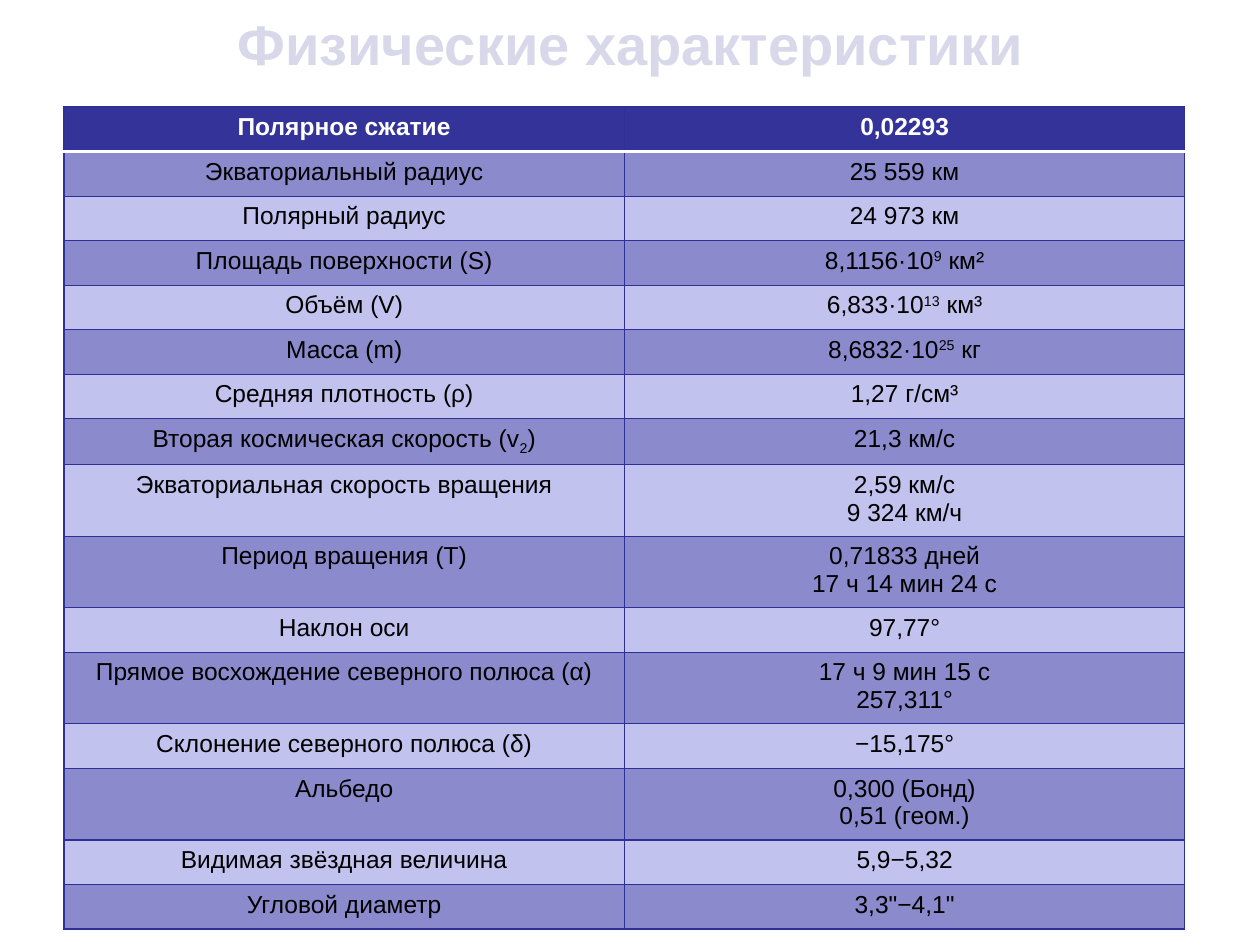
from lxml import etree
from pptx import Presentation
from pptx import util as u
from pptx.dml.color import RGBColor
from pptx.enum import text
from pptx.oxml.ns import qn

PX = u.Inches(1) / 126
COLORS = {
    "title": "D8D8EA", "header": "333399", "dark": "8A8ACC", "light": "C2C2EF",
    "border": "2F2F98", "white": "FFFFFF", "black": "000000",
}
FONT = "Arial"
TITLE = "Физические характеристики"
SUPER, SUB = 30, -25
ROWS = [
    ("Полярное сжатие", "0,02293"),
    ("Экваториальный радиус", "25 559 км"),
    ("Полярный радиус", "24 973 км"),
    ("Площадь поверхности (S)", [("8,1156·10", 0), ("9", SUPER), (" км²", 0)]),
    ("Объём (V)", [("6,833·10", 0), ("13", SUPER), (" км³", 0)]),
    ("Масса (m)", [("8,6832·10", 0), ("25", SUPER), (" кг", 0)]),
    ("Средняя плотность (ρ)", "1,27 г/см³"),
    ([("Вторая космическая скорость (v", 0), ("2", SUB), (")", 0)], "21,3 км/c"),
    ("Экваториальная скорость вращения", "2,59 км/с\n9 324 км/ч"),
    ("Период вращения (T)", "0,71833 дней\n17 ч 14 мин 24 с"),
    ("Наклон оси", "97,77°"),
    ("Прямое восхождение северного полюса (α)", "17 ч 9 мин 15 с\n257,311°"),
    ("Склонение северного полюса (δ)", "−15,175°"),
    ("Альбедо", "0,300 (Бонд)\n0,51 (геом.)"),
    ("Видимая звёздная величина", "5,9−5,32"),
    ("Угловой диаметр", "3,3\"−4,1\""),
]
TITLE_BOX = (64, 0, 1134, 87)
TABLE_BOX = (64, 107, 1121, 811)
TALL_ROW = 69


def px(value):
    return u.Emu(round(value * PX))


def write(frame, content, size=14, color="black", bold=False):
    paragraph = frame.paragraphs[0]
    paragraph.alignment = text.PP_ALIGN.CENTER
    runs = [(content, 0)] if isinstance(content, str) else content
    for words, baseline in runs:
        for index, line in enumerate(words.split("\n")):
            if index:
                paragraph.add_line_break()
            run = paragraph.add_run()
            run.text = line
            run.font.name = FONT
            run.font.size = u.Pt(size)
            run.font.bold = bold
            run.font.color.rgb = RGBColor.from_string(COLORS[color])
            if baseline:
                run.font._element.set("baseline", str(baseline * 1000))


def add_border(cell, side, color="border", width=0.75):
    properties = cell._tc.get_or_add_tcPr()
    line = etree.SubElement(properties, qn(f"a:ln{side}"), w=str(u.Pt(width)))
    fill = etree.SubElement(line, qn("a:solidFill"))
    etree.SubElement(fill, qn("a:srgbClr"), val=COLORS[color])


def is_tall(row):
    return any(isinstance(content, str) and "\n" in content for content in row)


def add_title(slide):
    shape = slide.shapes.add_textbox(*map(px, TITLE_BOX))
    shape.text_frame.word_wrap = True
    shape.text_frame.vertical_anchor = text.MSO_ANCHOR.MIDDLE
    write(shape.text_frame, TITLE, size=32, color="title", bold=True)


def add_characteristics(slide):
    table = slide.shapes.add_table(len(ROWS), 2, *map(px, TABLE_BOX)).table
    table.horz_banding = False
    tall_count = sum(map(is_tall, ROWS))
    short_row = (TABLE_BOX[3] - tall_count * TALL_ROW) / (len(ROWS) - tall_count)
    for row_index, row in enumerate(ROWS):
        table.rows[row_index].height = px(TALL_ROW if is_tall(row) else short_row)
        header = row_index == 0
        fill = "header" if header else ("light", "dark")[row_index % 2]
        for column_index, content in enumerate(row):
            cell = table.cell(row_index, column_index)
            write(cell.text_frame, content, color="white" if header else "black", bold=header)
            for side in "LRTB":
                if (row_index, side) in ((0, "B"), (1, "T")):
                    add_border(cell, side, "white", 2)
                else:
                    add_border(cell, side)
            cell.fill.solid()
            cell.fill.fore_color.rgb = RGBColor.from_string(COLORS[fill])


def main():
    presentation = Presentation()
    presentation.slide_width = px(1260)
    presentation.slide_height = px(945)
    slide = presentation.slides.add_slide(presentation.slide_layouts[6])
    add_title(slide)
    add_characteristics(slide)
    presentation.save("out.pptx")


if __name__ == "__main__":
    main()
